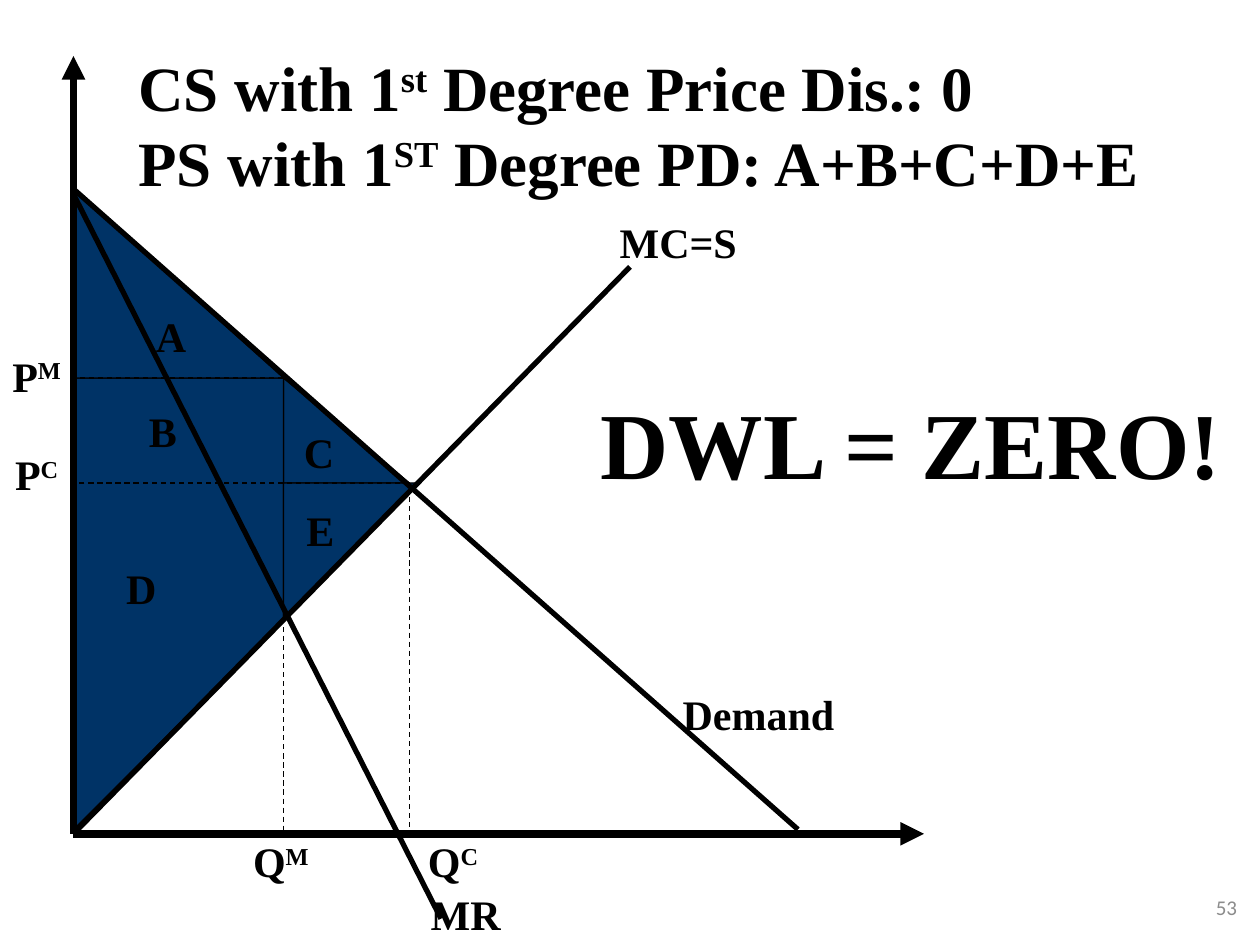
from lxml import etree
from pptx import Presentation
from pptx.dml.color import RGBColor as RGB
from pptx.enum.dml import MSO_LINE as Dash
from pptx.enum.shapes import MSO_CONNECTOR as Conn
from pptx.enum.text import MSO_ANCHOR as Anchor, MSO_AUTO_SIZE as Fit, PP_ALIGN as Align
from pptx.oxml.ns import qn
from pptx.util import Pt

BLACK = RGB(0, 0, 0)
NAVY = RGB(0, 0x33, 0x66)
GRAY = RGB(0x8C, 0x8C, 0x8C)


class Graph:
    """Draws the parts of a supply and demand graph on one slide."""

    def __init__(self, slide):
        self.slide = slide
        self.shapes = slide.shapes
        self.font = {"name": "Times New Roman", "size": Pt(24), "bold": True}

    def area(self, *spots):
        first, *rest = [(Pt(x), Pt(y)) for x, y in spots]
        pen = self.shapes.build_freeform(*first)
        pen.add_line_segments(rest, close=True)
        shape = pen.convert_to_shape()
        shape.shadow.inherit = False
        shape.fill.solid()
        shape.fill.fore_color.rgb = NAVY
        shape.line.color.rgb = BLACK
        shape.line.width = Pt(0.75)

    def line(self, start, end, width=3, dash=None, arrow=False):
        ends = [Pt(v) for v in (*start, *end)]
        link = self.shapes.add_connector(Conn.STRAIGHT, *ends)
        link.line.color.rgb = BLACK
        for key, value in {"width": Pt(width), "dash_style": dash}.items():
            setattr(link.line, key, value)
        if arrow:
            etree.SubElement(link.line._get_or_add_ln(), qn("a:tailEnd"), type="triangle")
        etree.SubElement(link._element.spPr, qn("a:effectLst"))

    def text(self, words, box, color=BLACK, align=Align.LEFT, frame=None, **style):
        body = self.shapes.add_textbox(*[Pt(v) for v in box]).text_frame
        form = {"word_wrap": False, "auto_size": Fit.SHAPE_TO_FIT_TEXT, **(frame or {})}
        for key, value in form.items():
            setattr(body, key, value)
        for i, row in enumerate(words.split("\n")):
            para = body.add_paragraph() if i else body.paragraphs[0]
            para.alignment = align
            for j, part in enumerate(row.split("^")):
                if part:
                    run = para.add_run()
                    run.text = part
                    for key, value in {**self.font, **style}.items():
                        setattr(run.font, key, value)
                    run.font.color.rgb = color
                    if j % 2:
                        run._r.get_or_add_rPr().set("baseline", "30000")


def main():
    deck = Presentation()
    deck.slide_width, deck.slide_height = Pt(720), Pt(540)
    graph = Graph(deck.slides.add_slide(deck.slide_layouts[6]))

    left, base, top = 42, 476.5, 108
    qm, qc, pm, pc, cross = 162, 234, 216, 276, 354
    graph.area((qm, pc), (qm, pm), (qc, pc))
    graph.area((left, pm), (qm, pm), (qm, cross), (left, 474))
    graph.area((left, pm), (qm, pm), (left, top))
    graph.area((qm, pc), (240, pc), (qm, cross))

    for end in ((528, base), (left, 32)):
        graph.line((left, base), end, 4.5, arrow=True)
    curves = [
        ((left, base), (360, 152.5)),
        ((left, top), (456, 474)),
        ((left, 111), (252, 525)),
    ]
    for start, end in curves:
        graph.line(start, end)
    for x, y in ((qm, pm), (qc, pc)):
        graph.line((x, y + 3), (x, base), 0.75, Dash.DASH)
        graph.line((x, y), (left, y), 0.75, Dash.DASH)

    labels = [
        ("MC=S", 347, 120, 81.5), ("Demand", 383, 390, 101.5), ("MR", 239, 504, 54.5),
        ("Q^M^", 137.5, 474, 48), ("P^M^", 0, 196.5, 44),
        ("P^C^", 1.5, 253, 40.5), ("Q^C^", 237.5, 474, 44.5),
        ("A", 82, 174, 31.5), ("B", 78, 228, 30), ("C", 166.5, 240, 31.5),
        ("D", 65, 318, 31.5), ("E", 168, 284.5, 30),
    ]
    for words, x, y, width in labels:
        graph.text(words, (x, y, width, 36))
    graph.text("DWL = ZERO!", (336, 216.5, 372, 72), size=Pt(54))
    graph.text(
        "CS with 1^st^ Degree Price Dis.: 0\nPS with 1^ST^ Degree PD: A+B+C+D+E",
        (72, 24, 592.5, 94), size=Pt(36),
    )
    frame = {"word_wrap": True, "auto_size": Fit.NONE, "vertical_anchor": Anchor.MIDDLE}
    graph.text("53", (660, 504, 54, 29), GRAY, Align.RIGHT, frame,
               name="Calibri", size=Pt(12), bold=False)
    deck.save("out.pptx")


if __name__ == "__main__":
    main()
